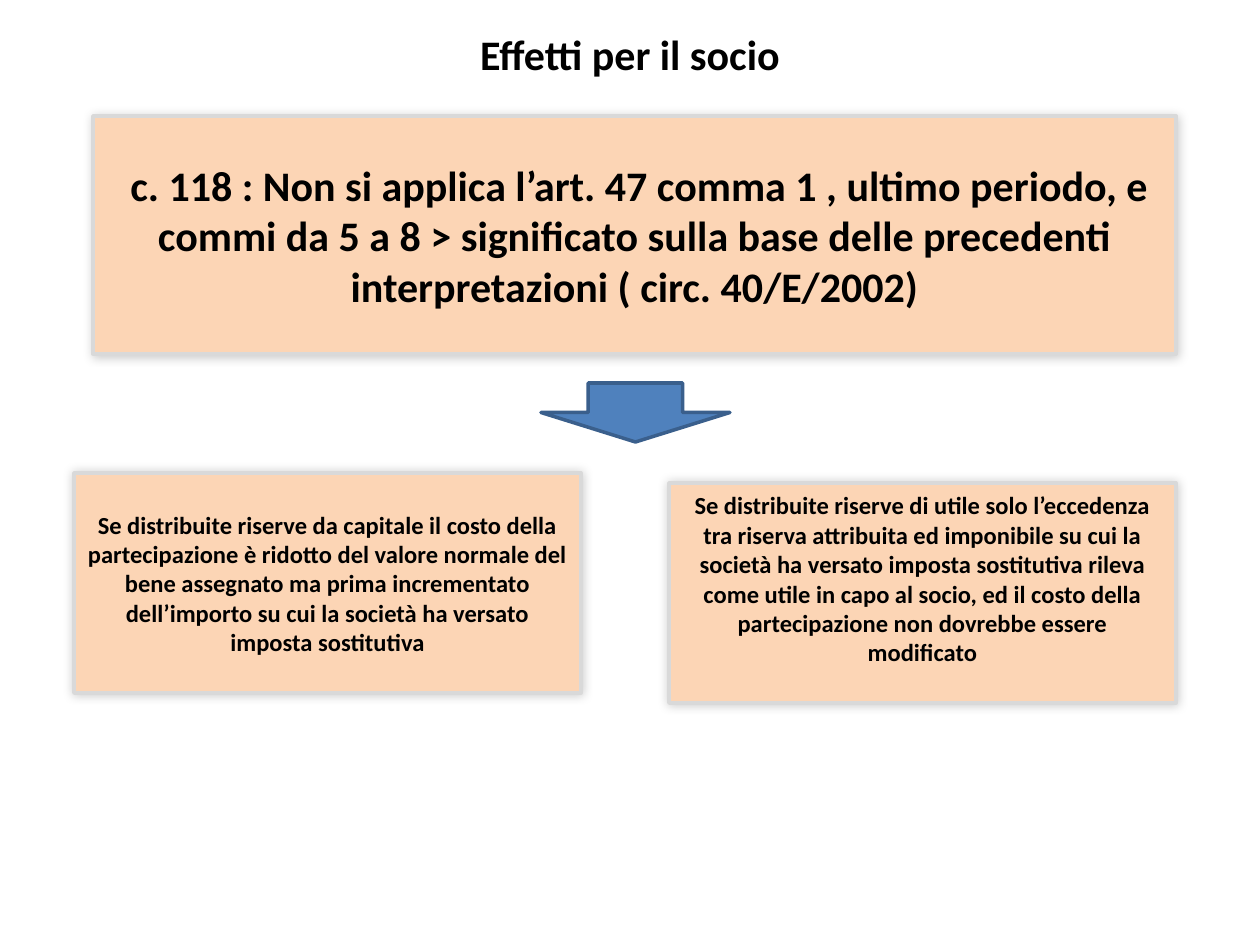
from lxml.etree import SubElement
from pptx import Presentation
from pptx.dml.color import RGBColor
from pptx.enum.shapes import MSO_SHAPE
from pptx.enum.text import MSO_ANCHOR, PP_ALIGN
from pptx.oxml.ns import qn
from pptx.util import Pt

SCALE = 914400 / 126
COLORS = {
    "text": "000000",
    "panel": "FCD5B5",
    "edge": "D9D9D9",
    "arrow": "4F81BD",
    "border": "3A5F8C",
}
TITLE = "Effetti per il socio"
RULE = (
    " c. 118 : Non si applica l’art. 47 comma 1 , ultimo periodo, e commi da 5 a 8 > "
    "significato sulla base delle precedenti interpretazioni ( circ. 40/E/2002)"
)
CAPITAL = (
    "Se distribuite riserve da capitale il costo della partecipazione è ridotto "
    "del valore normale del bene assegnato ma prima incrementato dell’importo "
    "su cui la società ha versato imposta sostitutiva"
)
PROFIT = (
    "Se distribuite riserve di utile solo l’eccedenza tra riserva attribuita ed "
    "imponibile su cui la società ha versato imposta sostitutiva rileva come utile "
    "in capo al socio, ed il costo della partecipazione non dovrebbe essere modificato"
)


def emu(px):
    return round(px * SCALE)


def color(name):
    return RGBColor.from_string(COLORS[name])


def write(shape, text, size, bottom=6):
    frame = shape.text_frame
    frame.text = text
    layout = {
        "word_wrap": True,
        "vertical_anchor": MSO_ANCHOR.MIDDLE,
        "margin_bottom": emu(bottom),
    }
    for key, value in layout.items():
        setattr(frame, key, value)
    line = frame.paragraphs[0]
    line.alignment = PP_ALIGN.CENTER
    font = line.runs[0].font
    for key, value in {"name": "Calibri", "size": Pt(size), "bold": True}.items():
        setattr(font, key, value)
    font.color.rgb = color("text")


def add_form(slide, kind, box, fill, edge):
    shape = slide.shapes.add_shape(kind, *map(emu, box))
    shape.shadow.inherit = False
    shape.fill.solid()
    shape.fill.fore_color.rgb = color(fill)
    shape.line.color.rgb = color(edge)
    shape.line.width = Pt(2)
    return shape


def add_glow(shape):
    effects = shape.element.spPr.find(qn("a:effectLst"))
    shadow = SubElement(
        effects, qn("a:outerShdw"), blurRad=str(Pt(6)), dist="0", dir="13500000"
    )
    tint = SubElement(shadow, qn("a:srgbClr"), val=COLORS["text"])
    SubElement(tint, qn("a:alpha"), val="20000")


def add_title(slide, box):
    title = slide.shapes.title
    for key, value in zip(("left", "top", "width", "height"), box):
        setattr(title, key, emu(value))
    write(title, TITLE, 24)


def add_panel(slide, box, text, size, bottom=6):
    panel = add_form(slide, MSO_SHAPE.RECTANGLE, box, "panel", "edge")
    add_glow(panel)
    write(panel, text, size, bottom)


def add_pair(slide, box):
    left, top, width, height = box
    gap, drop = 88, 10
    wide = (width - gap) // 2
    tall = height - drop
    add_panel(slide, (left, top, wide, tall), CAPITAL, 14)
    add_panel(slide, (left + wide + gap, top + drop, wide, tall), PROFIT, 14, 35)


def main():
    deck = Presentation()
    deck.slide_width, deck.slide_height = emu(1260), emu(945)
    slide = deck.slides.add_slide(deck.slide_layouts[5])
    add_title(slide, (0, 16, 1260, 76))
    add_panel(slide, (93, 116, 1083, 238), RULE, 24)
    add_form(slide, MSO_SHAPE.DOWN_ARROW, (541, 383, 189, 59), "arrow", "border")
    add_pair(slide, (74, 473, 1102, 230))
    deck.save("out.pptx")


if __name__ == "__main__":
    main()
